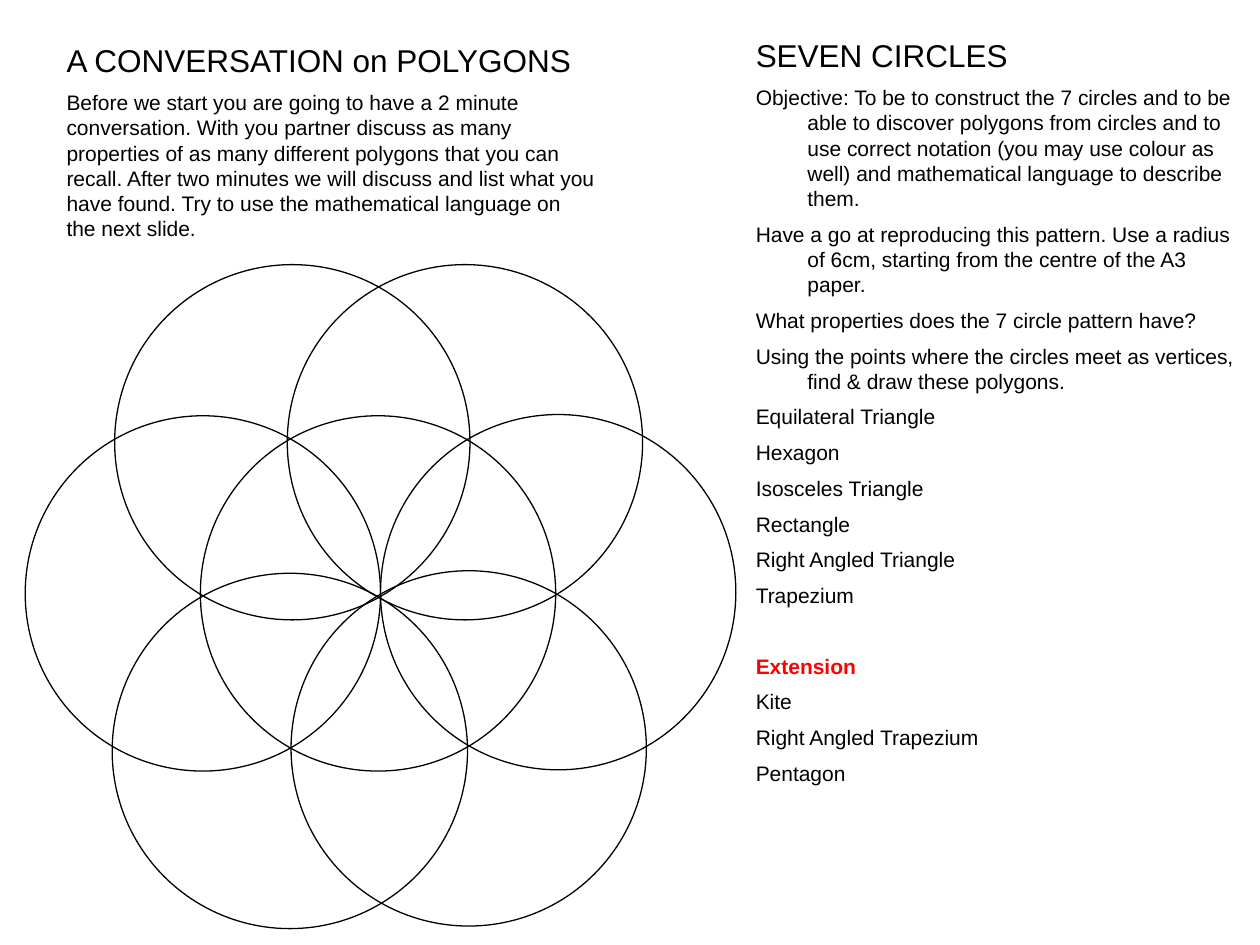
from pptx import Presentation
from pptx.dml.color import RGBColor
from pptx.enum.shapes import MSO_SHAPE
from pptx.util import Inches, Pt

COLORS = {"ink": "000000", "accent": "FF0000"}
SIZE = 2.82
CIRCLES = [  # left, top
    (1.59, 3.3), (3.02, 3.29), (2.28, 2.1), (0.91, 2.1),
    (0.2, 3.3), (0.89, 4.55), (2.31, 4.53),
]
TALK = [
    "A CONVERSATION on POLYGONS",
    "Before we start you are going to have a 2 minute conversation. With you partner "
    "discuss as many properties of as many different polygons that you can recall. "
    "After two minutes we will discuss and list what you have found. Try to use the "
    "mathematical language on the next slide.",
]
EXTRA = "Extension"
TASK = [
    "SEVEN CIRCLES",
    "Objective: To be to construct the 7 circles and to be able to discover polygons "
    "from circles and to use correct notation (you may use colour as well) and "
    "mathematical language to describe them.",
    "Have a go at reproducing this pattern. Use a radius of 6cm, starting from the "
    "centre of the A3 paper.",
    "What properties does the 7 circle pattern have?",
    "Using the points where the circles meet as vertices, find & draw these polygons.",
    "Equilateral Triangle",
    "Hexagon",
    "Isosceles Triangle",
    "Rectangle",
    "Right Angled Triangle",
    "Trapezium",
    EXTRA,
    "Kite",
    "Right Angled Trapezium",
    "Pentagon",
]


def color(name):
    return RGBColor.from_string(COLORS[name])


def add_circle(slide, left, top):
    ring = slide.shapes.add_shape(
        MSO_SHAPE.OVAL, Inches(left), Inches(top), Inches(SIZE), Inches(SIZE))
    ring.shadow.inherit = False
    ring.fill.background()
    ring.line.color.rgb = color("ink")
    ring.line.width = Pt(0.75)


def add_text(slide, box, lines, hang=0):
    """Write a heading and its paragraphs, with a hanging indent in inches."""
    frame = slide.shapes.add_textbox(*map(Inches, box)).text_frame
    frame.word_wrap = True
    for i, line in enumerate(lines):
        para = frame.paragraphs[0] if i == 0 else frame.add_paragraph()
        para.text = line
        extra = line == EXTRA
        para.space_before = Pt(26 if extra else 6 if i else 0)
        font = para.font
        font.name = "Arial"
        font.size = Pt(12 if i else 18)
        font.bold = extra
        font.color.rgb = color("accent" if extra else "ink")
        if hang:
            props = para._p.get_or_add_pPr()
            props.set("marL", str(Inches(hang)))
            props.set("indent", str(-Inches(hang)))


def main():
    deck = Presentation()
    deck.slide_width, deck.slide_height = Inches(10), Inches(7.5)
    slide = deck.slides.add_slide(deck.slide_layouts[6])
    for left, top in CIRCLES:
        add_circle(slide, left, top)
    add_text(slide, (5.9, 0.24, 4.07, 6.36), TASK, hang=0.41)
    add_text(slide, (0.43, 0.28, 4.4, 1.72), TALK)
    deck.save("out.pptx")


if __name__ == "__main__":
    main()
